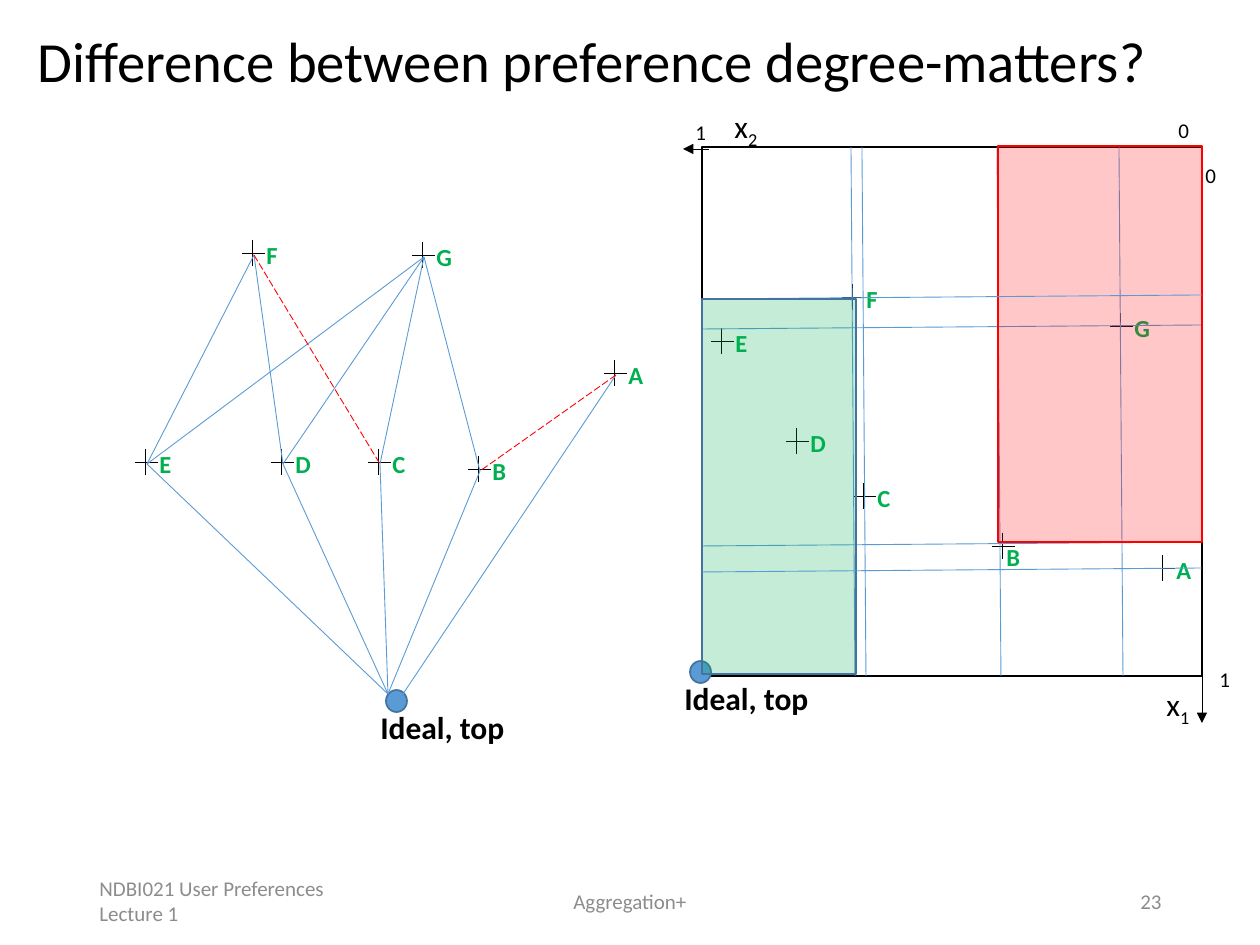
from lxml.etree import SubElement
from pptx import Presentation
from pptx.dml.color import RGBColor
from pptx.enum.dml import MSO_LINE
from pptx.enum.shapes import MSO_CONNECTOR, MSO_SHAPE
from pptx.enum.text import MSO_ANCHOR, MSO_AUTO_SIZE, PP_ALIGN
from pptx.oxml.ns import qn
from pptx.util import Emu, Pt

PIXELS_PER_INCH = 126
BLACK, GREEN, RED, GREY = "000000", "00B050", "FF0000", "8C8C8C"
BLUE, DARK_BLUE = "5B9BD5", "43739E"


def px(length):
    return Emu(round(length * 914400 / PIXELS_PER_INCH))


def color(value):
    return RGBColor.from_string(value)


def add_run(paragraph, text, size, text_color, bold=False, subscript=False):
    run = paragraph.add_run()
    run.text = text
    run.font.name = "Calibri"
    run.font.size = Pt(size)
    run.font.bold = bold
    run.font.color.rgb = color(text_color)
    if subscript:
        run._r.get_or_add_rPr().set("baseline", "-25000")


def add_text(slide, left, top, width, height, wrap=False):
    frame = slide.shapes.add_textbox(px(left), px(top), px(width), px(height)).text_frame
    frame.word_wrap = wrap
    frame.auto_size = MSO_AUTO_SIZE.SHAPE_TO_FIT_TEXT
    return frame


def add_line(slide, start, end, line_color, dashed=False, arrow=False):
    connector = slide.shapes.add_connector(
        MSO_CONNECTOR.STRAIGHT, *[px(value) for value in (*start, *end)])
    connector.line.color.rgb = color(line_color)
    connector.line.width = Pt(0.5)
    if dashed:
        connector.line.dash_style = MSO_LINE.LONG_DASH
    if arrow:
        SubElement(connector.line._get_or_add_ln(), qn("a:tailEnd"), type="triangle")
    SubElement(connector._element.spPr, qn("a:effectLst"))


def add_shape(slide, kind, box, line_color, fill=None, opacity=100):
    shape = slide.shapes.add_shape(kind, *[px(value) for value in box])
    shape.shadow.inherit = False
    shape.line.color.rgb = color(line_color)
    shape.line.width = Pt(1)
    if fill is None:
        shape.fill.background()
        return
    shape.fill.solid()
    shape.fill.fore_color.rgb = color(fill)
    if opacity < 100:
        fill_color = shape._element.spPr.find(qn("a:solidFill"))[0]
        SubElement(fill_color, qn("a:alpha"), val=str(opacity * 1000))


def add_point(slide, name, x, y, label_offset=(2, -19)):
    add_line(slide, (x, y - 13), (x, y + 13), BLACK)
    add_line(slide, (x - 10, y), (x + 13, y), BLACK)
    frame = add_text(slide, x + label_offset[0], y + label_offset[1], 41, 43)
    add_run(frame.paragraphs[0], name, 14, GREEN, bold=True)


def add_ideal(slide, left, top):
    add_shape(slide, MSO_SHAPE.OVAL, (left, top, 21, 22), DARK_BLUE, BLUE)
    frame = add_text(slide, left - 18, top + 12, 150, 50)
    add_run(frame.paragraphs[0], "Ideal, top", 18, BLACK, bold=True)


def build_title(slide, left, top, width, height):
    title = slide.shapes.title
    title.left, title.top, title.width, title.height = map(px, (left, top, width, height))
    frame = title.text_frame
    frame.auto_size = MSO_AUTO_SIZE.NONE
    frame.vertical_anchor = MSO_ANCHOR.MIDDLE
    paragraph = frame.paragraphs[0]
    paragraph.alignment = PP_ALIGN.LEFT
    paragraph.line_spacing = 0.9
    add_run(paragraph, "Difference between preference degree-matters?", 32.4, BLACK)


def build_plot(slide, left, top, width, height):
    slant = 4

    def at(x, y):
        return left + x, top + y

    def add_column_guide(x):
        add_line(slide, at(x, 0), at(x + slant, height), BLUE)

    def add_row_guide(y):
        add_line(slide, at(width, y), at(0, y + slant), BLUE)

    add_shape(slide, MSO_SHAPE.RECTANGLE, (left, top, width, height), BLACK)
    for value, x, y in (("0", 464, -36), ("0", 491, 9), ("1", 505, 513), ("1", -19, -34)):
        frame = add_text(slide, *at(x, y), 37, 38)
        add_run(frame.paragraphs[0], value, 12, BLACK)
    add_line(slide, at(7, 2), at(-19, 2), BLACK, arrow=True)
    add_line(slide, at(width, height), at(width, height + 47), BLACK, arrow=True)
    for index, x, y in (("1", 452, 532), ("2", 20, -46)):
        paragraph = add_text(slide, *at(x, y), 59, 50, wrap=True).paragraphs[0]
        add_run(paragraph, "x", 18, BLACK)
        add_run(paragraph, index, 18, BLACK, subscript=True)

    points = {"A": (460, 421), "B": (300, 399), "C": (161, 349), "D": (94, 294),
              "E": (19, 194), "F": (150, 150), "G": (418, 179)}
    for name, point in points.items():
        offset = (-8, -10) if name == "B" else (2, -19)
        add_point(slide, name, *at(*point), offset)
    add_ideal(slide, *at(-12, 514))

    add_column_guide(417)
    add_row_guide(178)
    add_row_guide(395)
    add_column_guide(295)
    add_shape(slide, MSO_SHAPE.RECTANGLE, (*at(296, -1), 204, 396), RED, RED, 22)
    add_column_guide(149)
    add_row_guide(148)
    add_shape(slide, MSO_SHAPE.RECTANGLE, (*at(0, 152), 154, 375), DARK_BLUE, GREEN, 23)
    add_row_guide(421)
    add_column_guide(160)


def build_graph(slide, left, top):
    points = {"A": (479, 134), "G": (287, 16), "F": (117, 14), "E": (10, 223),
              "D": (146, 223), "C": (243, 223), "B": (343, 230)}

    def node(name):
        x, y = points[name]
        return left + x + 2, top + y + 2

    for name, (x, y) in points.items():
        add_point(slide, name, left + x, top + y)
    add_ideal(slide, left + 251, top + 451)
    for lower, upper in ("BG", "CG", "DG", "EG", "EF", "DF"):
        add_line(slide, node(lower), node(upper), BLUE)
    for name in "ABCDE":
        ideal_x = 268 if name == "A" else 253
        add_line(slide, node(name), (left + ideal_x, top + 455), BLUE)
    for start, end in ("AB", "FC"):
        add_line(slide, node(start), node(end), RED, dashed=True)


def build_footer(slide, top, height):
    for text, left, width, alignment in (
        ("NDBI021 User Preferences Lecture 1", 87, 284, PP_ALIGN.LEFT),
        ("Aggregation+", 417, 426, PP_ALIGN.CENTER),
        ("23", 890, 284, PP_ALIGN.RIGHT),
    ):
        frame = add_text(slide, left, top, width, height, wrap=True)
        frame.auto_size = MSO_AUTO_SIZE.NONE
        frame.vertical_anchor = MSO_ANCHOR.MIDDLE
        frame.paragraphs[0].alignment = alignment
        add_run(frame.paragraphs[0], text, 12, GREY)


def main():
    presentation = Presentation()
    presentation.slide_width = px(1260)
    presentation.slide_height = px(945)
    slide = presentation.slides.add_slide(presentation.slide_layouts[5])
    build_title(slide, 25, 25, 1200, 79)
    build_plot(slide, 702, 147, 500, 529)
    build_graph(slide, 135, 239)
    build_footer(slide, 876, 50)
    presentation.save("out.pptx")


if __name__ == "__main__":
    main()
